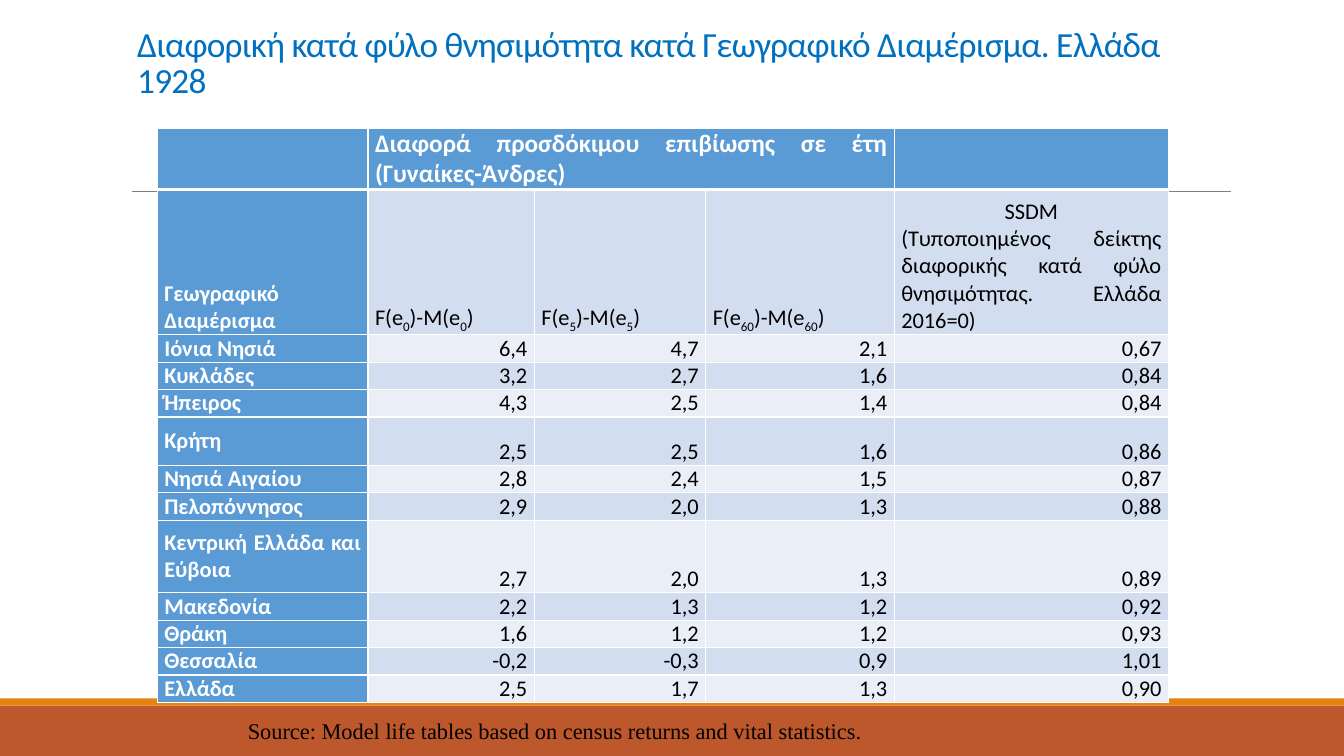
from lxml.etree import SubElement
from pptx import Presentation
from pptx.dml.color import RGBColor
from pptx.enum.shapes import MSO_CONNECTOR, MSO_SHAPE
from pptx.enum.text import MSO_ANCHOR, PP_ALIGN
from pptx.oxml.ns import qn
from pptx.util import Inches, Pt

WIDTH, HEIGHT = 13.33, 7.5
WHITE = RGBColor(0xFF, 0xFF, 0xFF)
BLACK = RGBColor(0, 0, 0)
GRAY = RGBColor(0x7F, 0x7F, 0x7F)
TITLE_BLUE = RGBColor(0x00, 0x70, 0xC0)
HEADER_BLUE = RGBColor(0x5B, 0x9B, 0xD5)
BANDS = RGBColor(0xD2, 0xDE, 0xEF), RGBColor(0xEA, 0xEF, 0xF7)
RUST = RGBColor(0xBD, 0x58, 0x2C)
ORANGE = RGBColor(0xE4, 0x83, 0x12)

COLUMN_WIDTHS = [2.09, 1.65, 1.7, 1.87, 2.72]
LINE_ROW = 0.24
ROW_LINES = [2, 6, 1, 1, 1, 2, 1, 1, 3, 1, 1, 1, 1]

# Text between bars is set as a subscript
HEADINGS = [
    "Γεωγραφικό Διαμέρισμα",
    "F(e|0|)-M(e|0|)",
    "F(e|5|)-M(e|5|)",
    "F(e|60|)-M(e|60|)",
    "SSDM\n(Τυποποιημένος δείκτης διαφορικής κατά φύλο θνησιμότητας. Ελλάδα 2016=0)",
]
REGIONS = [
    ("Ιόνια Νησιά", "6,4", "4,7", "2,1", "0,67"),
    ("Κυκλάδες", "3,2", "2,7", "1,6", "0,84"),
    ("Ήπειρος", "4,3", "2,5", "1,4", "0,84"),
    ("Κρήτη", "2,5", "2,5", "1,6", "0,86"),
    ("Νησιά Αιγαίου", "2,8", "2,4", "1,5", "0,87"),
    ("Πελοπόννησος", "2,9", "2,0", "1,3", "0,88"),
    ("Κεντρική Ελλάδα και Εύβοια", "2,7", "2,0", "1,3", "0,89"),
    ("Μακεδονία", "2,2", "1,3", "1,2", "0,92"),
    ("Θράκη", "1,6", "1,2", "1,2", "0,93"),
    ("Θεσσαλία", "-0,2", "-0,3", "0,9", "1,01"),
    ("Ελλάδα", "2,5", "1,7", "1,3", "0,90"),
]


def write(frame, text, size=16, color=BLACK, bold=False, font="Calibri",
          align=PP_ALIGN.LEFT, line_spacing=None, tracking=None):
    frame.word_wrap = True
    for index, line in enumerate(text.split("\n")):
        para = frame.add_paragraph() if index else frame.paragraphs[0]
        para.alignment = align
        para.line_spacing = line_spacing
        for position, part in enumerate(line.split("|")):
            span = para.add_run()
            span.text = part
            span.font.size, span.font.name = Pt(size), font
            span.font.bold, span.font.color.rgb = bold, color
            properties = span._r.get_or_add_rPr()
            if position % 2:
                properties.set("baseline", "-25000")
            if tracking:
                properties.set("spc", str(tracking))


def add_band(page, top, height, color):
    band = page.shapes.add_shape(MSO_SHAPE.RECTANGLE, 0, Inches(top),
                                 Inches(WIDTH), Inches(height))
    band.shadow.inherit = False
    band.fill.solid()
    band.fill.fore_color.rgb = color
    band.line.fill.background()


def add_rule(page, left, right, top):
    rule = page.shapes.add_connector(MSO_CONNECTOR.STRAIGHT, Inches(left), Inches(top),
                                     Inches(right), Inches(top))
    rule.line.color.rgb, rule.line.width = GRAY, Pt(0.5)
    SubElement(rule._element.spPr, qn("a:effectLst"))


def set_borders(cell, **widths):
    properties = cell._tc.get_or_add_tcPr()
    for side in "LRTB":
        border = SubElement(properties, qn("a:ln" + side), w=str(Pt(widths.get(side, 1))))
        fill = SubElement(border, qn("a:solidFill"))
        SubElement(fill, qn("a:srgbClr"), val=str(WHITE))


def format_cell(cell, row, column):
    thick = {0: {"B": 3}, 1: {"T": 3}}
    set_borders(cell, **thick.get(row, {}))
    heading = row == 0 or column == 0
    cell.fill.solid()
    cell.fill.fore_color.rgb = HEADER_BLUE if heading else BANDS[(row - 1) % 2]
    cell.margin_left = cell.margin_right = Inches(0.07)
    cell.margin_top = cell.margin_bottom = 0
    is_region = column == 0 and 1 < row < len(ROW_LINES) - 1
    cell.vertical_anchor = MSO_ANCHOR.MIDDLE if is_region else MSO_ANCHOR.BOTTOM
    return heading


def add_mortality_table(page):
    rows = [("", "Διαφορά προσδόκιμου επιβίωσης σε έτη (Γυναίκες-Άνδρες)", "", "", ""),
            HEADINGS, *REGIONS]
    table = page.shapes.add_table(
        len(rows), len(COLUMN_WIDTHS), Inches(1.56), Inches(1.27),
        Inches(sum(COLUMN_WIDTHS)), Inches(LINE_ROW * sum(ROW_LINES))).table
    table.horz_banding = False
    for column, width in zip(table.columns, COLUMN_WIDTHS):
        column.width = Inches(width)
    for row, lines in zip(table.rows, ROW_LINES):
        row.height = Inches(LINE_ROW * lines)
    for row, texts in enumerate(rows):
        for column, text in enumerate(texts):
            cell = table.cell(row, column)
            heading = format_cell(cell, row, column)
            if text:
                is_value = row > 1 and column > 0
                write(cell.text_frame, text, size=16 if row else 18, bold=heading,
                      color=WHITE if heading else BLACK,
                      align=PP_ALIGN.RIGHT if is_value else PP_ALIGN.JUSTIFY)
    table.cell(0, 1).merge(table.cell(0, 3))
    table.cell(1, 4).text_frame.paragraphs[0].alignment = PP_ALIGN.CENTER


def add_title(page, text):
    title = page.shapes.title
    title.left, title.top = Inches(1.26), Inches(0.29)
    title.width, title.height = Inches(11), Inches(0.76)
    title.text_frame.vertical_anchor = MSO_ANCHOR.BOTTOM
    write(title.text_frame, text, size=25.2, color=TITLE_BLUE,
          line_spacing=0.85, tracking=-50)


def add_source(page, text):
    box = page.shapes.add_textbox(Inches(2.36), Inches(7.07), Inches(6.67), Inches(0.37))
    write(box.text_frame, text, font="Times New Roman")


def main():
    deck = Presentation()
    deck.slide_width, deck.slide_height = Inches(WIDTH), Inches(HEIGHT)
    page = deck.slides.add_slide(deck.slide_layouts[5])

    # Footer bands and the rule below the title
    add_band(page, 7, 0.5, RUST)
    add_band(page, 6.93, 0.07, ORANGE)
    add_rule(page, 1.31, 12.21, 1.9)

    # Content
    add_title(page, "Διαφορική κατά φύλο θνησιμότητα κατά Γεωγραφικό Διαμέρισμα. Ελλάδα 1928")
    add_mortality_table(page)
    add_source(page, "Source: Model life tables based on census returns and vital statistics.")
    deck.save("out.pptx")


if __name__ == "__main__":
    main()
